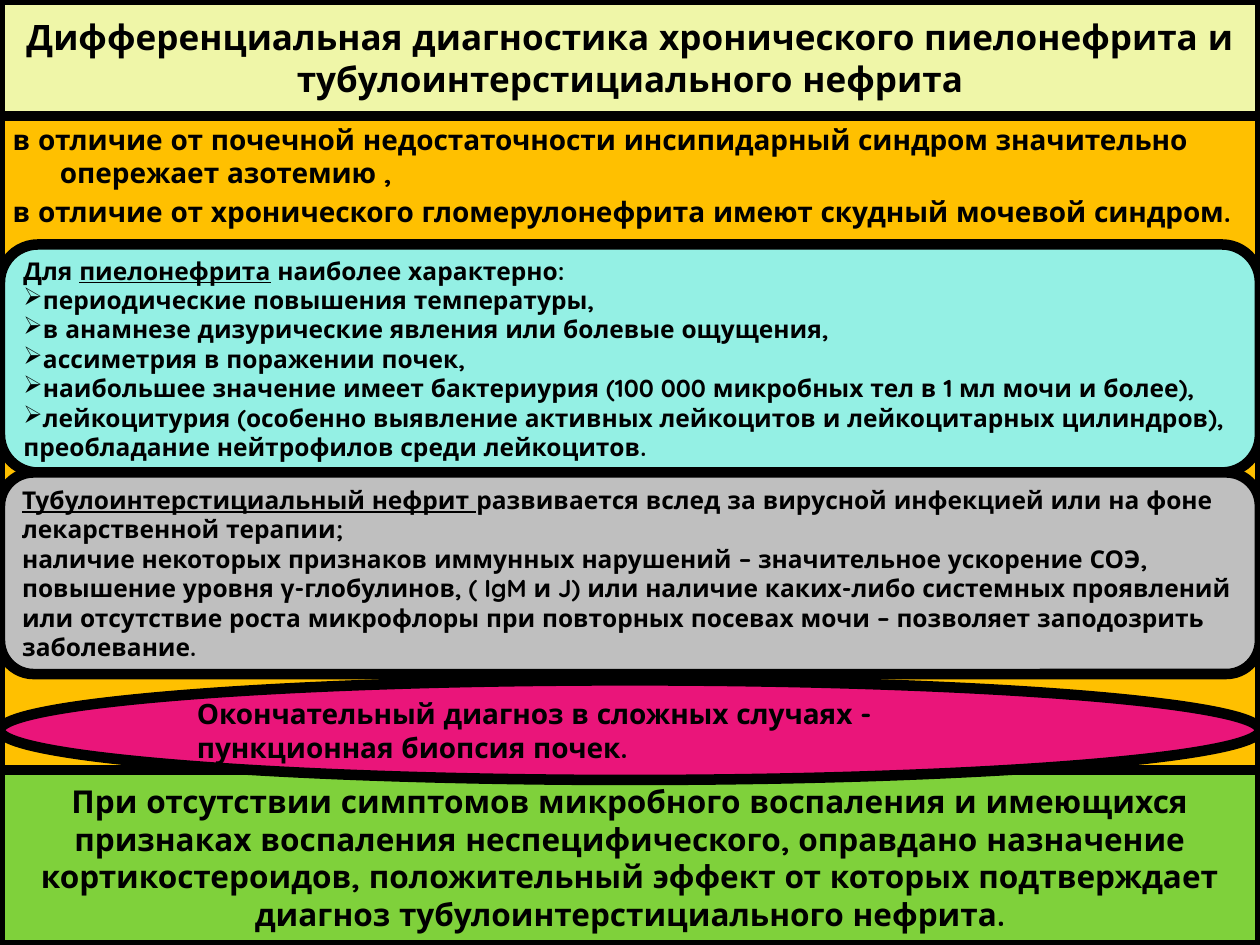
import pptx
import pptx.util
import pptx.dml.color
import pptx.enum.shapes
import pptx.enum.text
import pptx.oxml.ns
from lxml import etree

SHAPES = pptx.enum.shapes.MSO_SHAPE
ALIGN = pptx.enum.text.PP_ALIGN
ANCHOR = pptx.enum.text.MSO_ANCHOR

WIDTH, HEIGHT = 10, 7.5
FONT = "Quicksand"
BORDER = 6
COLOURS = {
    "ink": "000000",
    "title": "EFF6A8",
    "differences": "FFC000",
    "treatment": "7FD13B",
    "pyelonephritis": "94F0E4",
    "biopsy": "EA157A",
    "interstitial": "BFBFBF",
}

TITLE = ["Дифференциальная диагностика хронического пиелонефрита и тубулоинтерстициального нефрита"]
DIFFERENCES = [
    "в отличие от почечной недостаточности инсипидарный синдром значительно опережает азотемию ,",
    "в отличие от хронического гломерулонефрита имеют скудный мочевой синдром.",
]
TREATMENT = [
    "При отсутствии симптомов микробного воспаления и имеющихся признаках воспаления "
    "неспецифического, оправдано назначение кортикостероидов, положительный эффект от "
    "которых подтверждает диагноз тубулоинтерстициального нефрита."
]
PYELONEPHRITIS = [
    [("Для ", False), ("пиелонефрита", True), (" наиболее характерно:", False)],
    "периодические повышения температуры,",
    "в анамнезе дизурические явления или болевые ощущения,",
    "ассиметрия в поражении почек,",
    "наибольшее значение имеет бактериурия (100 000 микробных тел в 1 мл мочи и более),",
    "лейкоцитурия (особенно выявление активных лейкоцитов и лейкоцитарных цилиндров), "
    "преобладание нейтрофилов среди лейкоцитов.",
]
BIOPSY = ["Окончательный диагноз в сложных случаях - пункционная биопсия почек."]
INTERSTITIAL = [
    [("Тубулоинтерстициальный нефрит ", True),
     ("развивается вслед за вирусной инфекцией или на фоне лекарственной терапии;", False)],
    "наличие некоторых признаков иммунных нарушений – значительное ускорение СОЭ, "
    "повышение уровня γ-глобулинов, ( IgM и J) или наличие каких-либо системных проявлений "
    "или отсутствие роста микрофлоры при повторных посевах мочи – позволяет заподозрить "
    "заболевание.",
]

PANELS = [
    ("treatment", SHAPES.RECTANGLE, 6.11, HEIGHT, TREATMENT, 18, ALIGN.CENTER, None),
    ("pyelonephritis", SHAPES.ROUNDED_RECTANGLE, 1.94, 3.75, PYELONEPHRITIS, 14, ALIGN.LEFT, "➢"),
    ("biopsy", SHAPES.OVAL, 5.4, 6.19, BIOPSY, 16, ALIGN.LEFT, None),
    ("interstitial", SHAPES.ROUNDED_RECTANGLE, 3.75, 5.35, INTERSTITIAL, 14, ALIGN.LEFT, None),
]


def colour(name):
    return pptx.dml.color.RGBColor.from_string(COLOURS[name])


def place(band, top, bottom):
    band.left, band.top = 0, pptx.util.Inches(top)
    band.width, band.height = pptx.util.Inches(WIDTH), pptx.util.Inches(bottom - top)


def paint(band, name):
    band.fill.solid()
    band.fill.fore_color.rgb = colour(name)
    band.line.color.rgb = colour("ink")
    band.line.width = pptx.util.Pt(BORDER)


def set_bullet(paragraph, mark):
    properties = paragraph._p.get_or_add_pPr()
    tag = "a:buChar" if mark else "a:buNone"
    bullet = etree.SubElement(properties, pptx.oxml.ns.qn(tag))
    if mark:
        bullet.set("char", mark)


def write(band, content, size, align, anchor, mark=None):
    frame = band.text_frame
    frame.word_wrap = True
    frame.auto_size = pptx.enum.text.MSO_AUTO_SIZE.NONE
    frame.vertical_anchor = anchor
    for index, item in enumerate(content):
        paragraph = frame.paragraphs[0] if index == 0 else frame.add_paragraph()
        if index == 0:
            paragraph.space_before = pptx.util.Pt(0)
        paragraph.alignment = align
        set_bullet(paragraph, mark if index else None)
        pieces = [(item, False)] if isinstance(item, str) else item
        for words, underlined in pieces:
            run = paragraph.add_run()
            run.text = words
            run.font.name = FONT
            run.font.size = pptx.util.Pt(size)
            run.font.bold = True
            run.font.underline = underlined
            run.font.color.rgb = colour("ink")


def main():
    deck = pptx.Presentation()
    deck.slide_width = pptx.util.Inches(WIDTH)
    deck.slide_height = pptx.util.Inches(HEIGHT)
    slide = deck.slides.add_slide(deck.slide_layouts[1])

    heading, differences = slide.placeholders
    heading_bottom = 0.92
    place(heading, 0, heading_bottom)
    paint(heading, "title")
    write(heading, TITLE, 20, ALIGN.CENTER, ANCHOR.MIDDLE)
    place(differences, heading_bottom, HEIGHT)
    paint(differences, "differences")
    write(differences, DIFFERENCES, 16, ALIGN.LEFT, ANCHOR.TOP)

    for name, outline, top, bottom, content, size, align, mark in PANELS:
        panel = slide.shapes.add_shape(outline, 0, 0, 0, 0)
        panel.shadow.inherit = False
        place(panel, top, bottom)
        paint(panel, name)
        write(panel, content, size, align, ANCHOR.MIDDLE, mark)

    deck.save("out.pptx")


if __name__ == "__main__":
    main()
